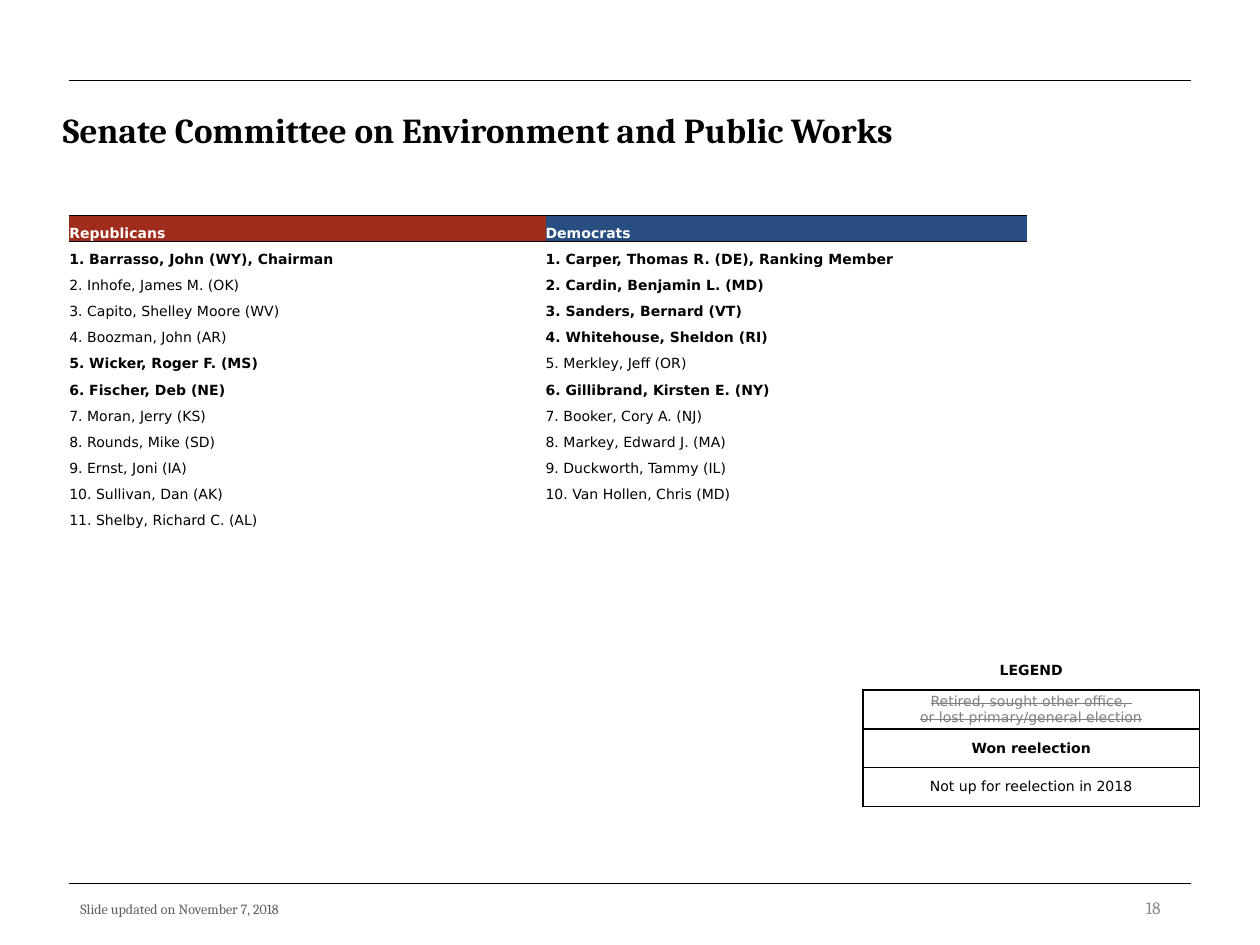
import pptx
import pptx.util
import pptx.dml.color
import pptx.enum.shapes
import pptx.enum.text
import pptx.oxml.ns
import lxml.etree

Pt = pptx.util.Pt
ALIGN = pptx.enum.text.PP_ALIGN
ANCHOR = pptx.enum.text.MSO_ANCHOR

THEME = {
    "serif": "Cambria", "sans": "DejaVu Sans",
    "black": "000000", "white": "FFFFFF", "footer": "5F5F5F",
    "number": "8C8C8C", "retired": "7F7F7F",
    "republican": "A02C1C", "democrat": "284D81",
    "title_size": 20, "number_size": 10, "body_size": 8,
}

prs = pptx.Presentation()
prs.slide_width, prs.slide_height = pptx.util.Inches(10), pptx.util.Inches(7.5)
s = prs.slides.add_slide(prs.slide_layouts[6])

# Grid of 100 columns by 75 rows
COL, ROW = prs.slide_width / 100, prs.slide_height / 75


def write(tf, lines, color, font="sans", size="body_size", bold=False,
          strike=False, align=ALIGN.LEFT, spacing=1.0):
    for i, line in enumerate(lines):
        p = tf.add_paragraph() if i else tf.paragraphs[0]
        p.alignment, p.line_spacing = align, spacing
        r = p.add_run()
        r.text = line
        look = {"name": THEME[font], "size": Pt(THEME[size]), "bold": bold}
        for key, value in look.items():
            setattr(r.font, key, value)
        r.font.color.rgb = pptx.dml.color.RGBColor.from_string(THEME[color])
        if strike:
            r.font._element.set("strike", "sngStrike")


def style_cell(cell, borders, width, fill=None, **layout):
    """Draw the named sides (of LRTB), clear the others, then fill the cell."""
    tc_pr = cell._tc.get_or_add_tcPr()
    for side in "LRTB":
        ln = lxml.etree.SubElement(tc_pr, pptx.oxml.ns.qn("a:ln" + side))
        if side in borders:
            ln.set("w", str(Pt(width)))
            paint = lxml.etree.SubElement(ln, pptx.oxml.ns.qn("a:solidFill"))
            lxml.etree.SubElement(paint, pptx.oxml.ns.qn("a:srgbClr"), val=THEME["black"])
        else:
            lxml.etree.SubElement(ln, pptx.oxml.ns.qn("a:noFill"))
    if fill:
        cell.fill.solid()
        cell.fill.fore_color.rgb = pptx.dml.color.RGBColor.from_string(THEME[fill])
    else:
        cell.fill.background()
    for key, value in layout.items():
        setattr(cell, key, value)


# Rules above the title and above the footer
for y in (6.4, 70.1):
    sp = s.shapes.add_connector(pptx.enum.shapes.MSO_CONNECTOR.STRAIGHT,
                                int(5.5 * COL), int(y * ROW), int(94.5 * COL), int(y * ROW))
    sp.line.width = Pt(0.5)
    sp.line.color.rgb = pptx.dml.color.RGBColor.from_string(THEME["black"])
    lxml.etree.SubElement(sp._element.spPr, pptx.oxml.ns.qn("a:effectLst"))

# Title, footer and slide number: left, top, width, height, anchor, text, format
texts = [
    (4, 8.5, 92, 7, ANCHOR.TOP, "Senate Committee on Environment and Public Works",
     {"color": "black", "size": "title_size", "bold": True, "spacing": 0.9}),
    (5.4, 71, 44, 2.4, ANCHOR.TOP, "Slide updated on November 7, 2018", {"color": "footer"}),
    (70.6, 70.6, 22.5, 2.9, ANCHOR.MIDDLE, "18",
     {"color": "number", "size": "number_size", "align": ALIGN.RIGHT}),
]
for x, y, w, h, anchor, text, look in texts:
    sp = s.shapes.add_textbox(int(x * COL), int(y * ROW), int(w * COL), int(h * ROW))
    tf = sp.text_frame
    tf.word_wrap, tf.vertical_anchor = True, anchor
    write(tf, [text], font="serif", **look)

# Legend table: lines, borders, format
legend = [
    (["LEGEND"], "B", {"color": "black", "bold": True}),
    (["Retired, sought other office, ", "or lost primary/general election"], "LRTB",
     {"color": "retired", "strike": True}),
    (["Won reelection"], "LRTB", {"color": "black", "bold": True}),
    (["Not up for reelection in 2018"], "LRTB", {"color": "black"}),
]
table = s.shapes.add_table(len(legend), 1, int(68.5 * COL), int(51.7 * ROW),
                           int(26.7 * COL), int(12.3 * ROW)).table
table.first_row = table.horz_banding = False
for i, (lines, borders, look) in enumerate(legend):
    cell = table.cell(i, 0)
    style_cell(cell, borders, 1, vertical_anchor=ANCHOR.MIDDLE,
               margin_left=int(0.4 * COL), margin_right=int(0.4 * COL),
               margin_top=int(0.2 * ROW), margin_bottom=int(0.2 * ROW))
    write(cell.text_frame, lines, align=ALIGN.CENTER, **look)

# Members table: heading, fill, width, numbers of the reelected, names
parties = [
    ("Republicans", "republican", 37.8, {1, 5, 6}, [
        "Barrasso, John (WY), Chairman", "Inhofe, James M. (OK)",
        "Capito, Shelley Moore (WV)", "Boozman, John (AR)", "Wicker, Roger F. (MS)",
        "Fischer, Deb (NE)", "Moran, Jerry (KS)", "Rounds, Mike (SD)",
        "Ernst, Joni (IA)", "Sullivan, Dan (AK)", "Shelby, Richard C. (AL)"]),
    ("Democrats", "democrat", 38.2, {1, 2, 3, 4, 6}, [
        "Carper, Thomas R. (DE), Ranking Member", "Cardin, Benjamin L. (MD)",
        "Sanders, Bernard (VT)", "Whitehouse, Sheldon (RI)", "Merkley, Jeff (OR)",
        "Gillibrand, Kirsten E. (NY)", "Booker, Cory A. (NJ)", "Markey, Edward J. (MA)",
        "Duckworth, Tammy (IL)", "Van Hollen, Chris (MD)"]),
]
n_rows = 1 + max(len(party[-1]) for party in parties)
table = s.shapes.add_table(n_rows, len(parties), int(5.5 * COL), int(17.1 * ROW),
                           int(76 * COL), int(24.9 * ROW)).table
table.first_row = table.horz_banding = False
for j, (heading, fill, width, reelected, names) in enumerate(parties):
    table.columns[j].width = int(width * COL)
    for i in range(n_rows):
        cell = table.cell(i, j)
        style_cell(cell, {0: "TB", 1: "T"}.get(i, ""), 0.5, None if i else fill,
                   vertical_anchor=ANCHOR.BOTTOM, margin_left=0, margin_right=0,
                   margin_top=0, margin_bottom=0)
        if i == 0:
            write(cell.text_frame, [heading], "white", bold=True)
        elif i <= len(names):
            write(cell.text_frame, [f"{i}. {names[i - 1]}"], "black", bold=i in reelected)
        else:  # a small type size keeps the empty cell from stretching its row
            lxml.etree.SubElement(cell.text_frame.paragraphs[0]._p,
                                  pptx.oxml.ns.qn("a:endParaRPr"),
                                  sz=str(THEME["body_size"] * 100))

prs.save("out.pptx")
